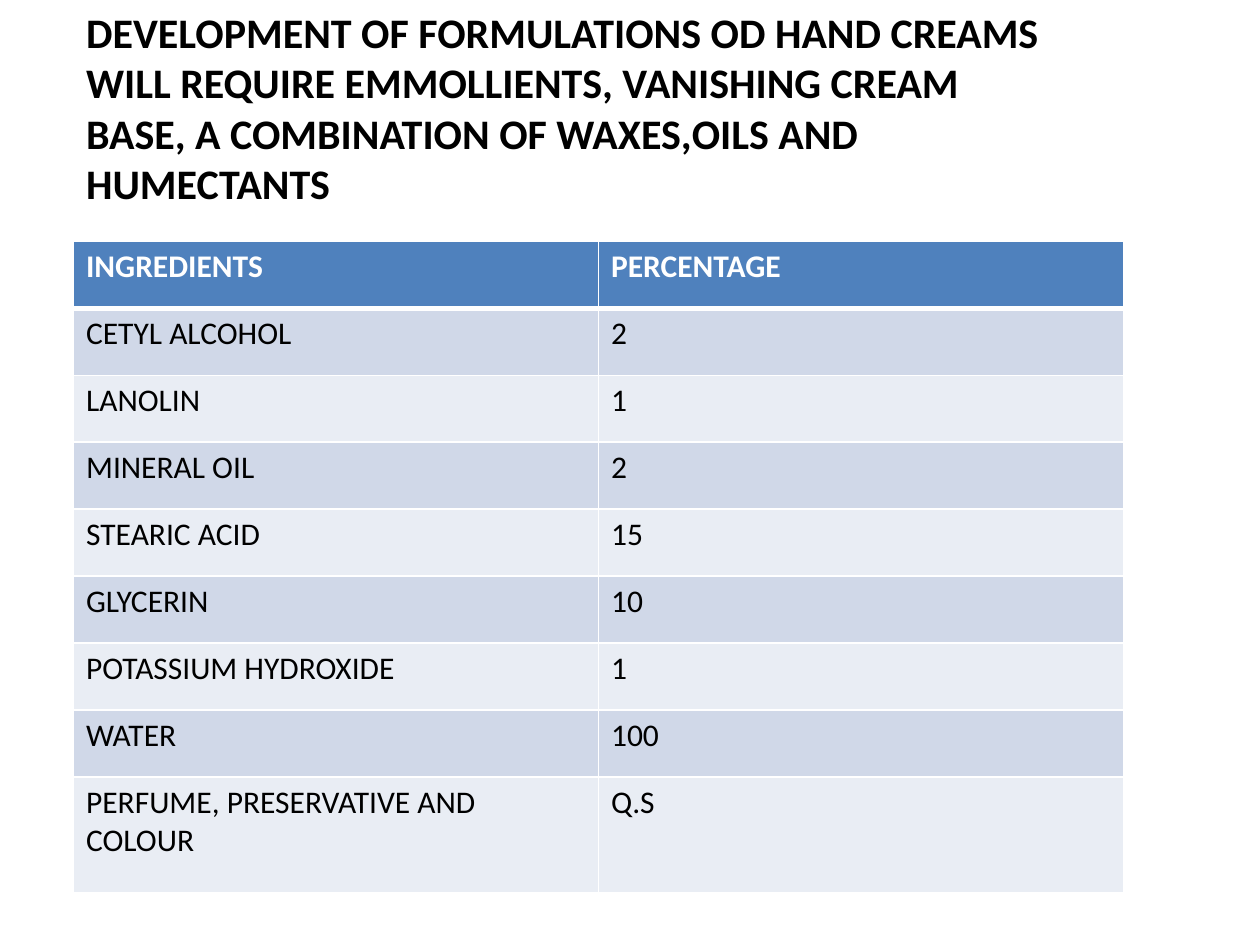
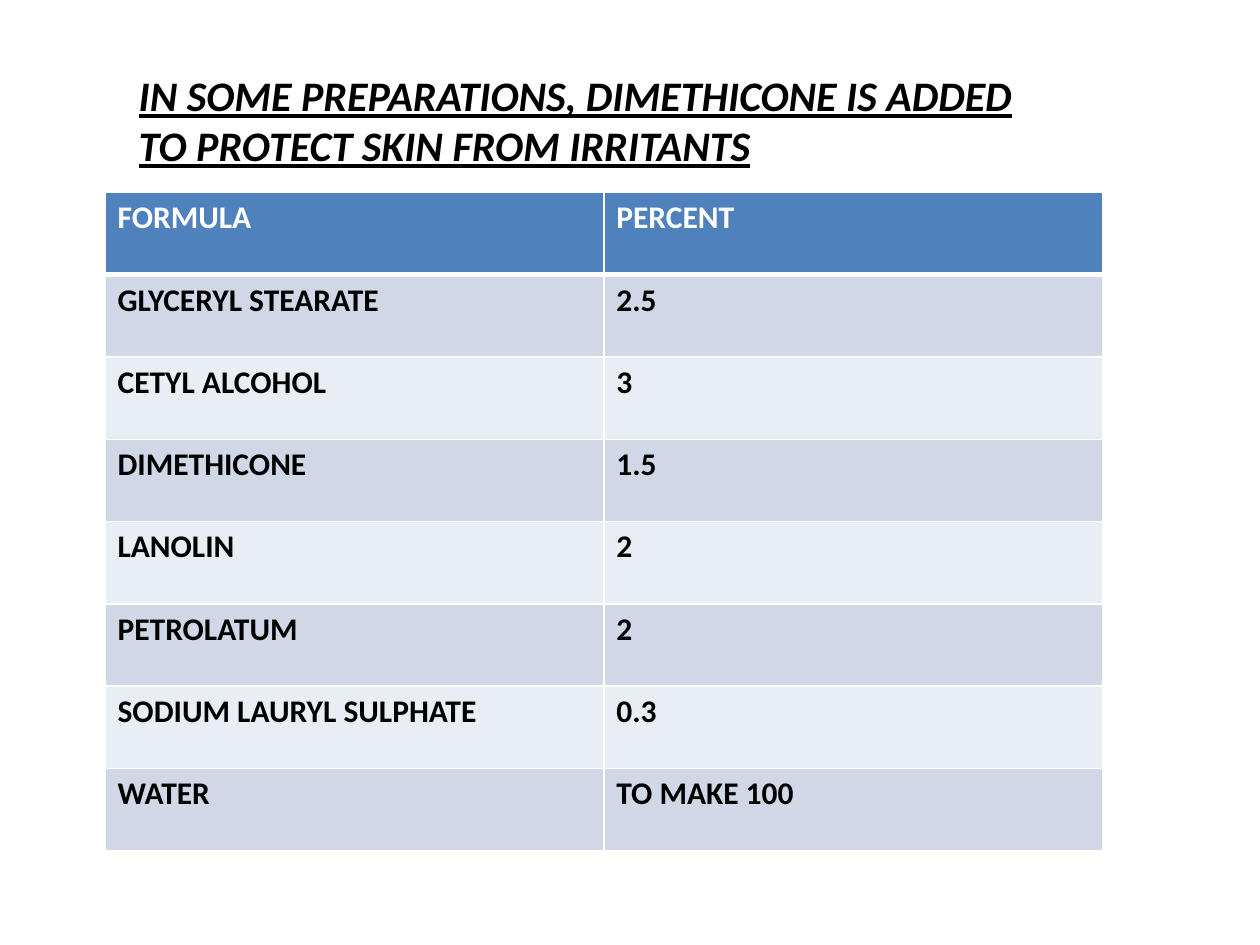
"""Build two slides of hand cream formulations."""
from lxml.etree import SubElement
from pptx import Presentation
from pptx.dml.color import RGBColor
from pptx.enum.text import MSO_ANCHOR, MSO_AUTO_SIZE, PP_ALIGN
from pptx.oxml.ns import qn
from pptx.util import Pt

BLACK = RGBColor(0x00, 0x00, 0x00)
WHITE = RGBColor(0xFF, 0xFF, 0xFF)
HEADER_BLUE = RGBColor(0x4F, 0x81, 0xBD)
BAND_DARK = RGBColor(0xD0, 0xD8, 0xE8)
BAND_LIGHT = RGBColor(0xE9, 0xED, 0xF4)

HAND_CREAM = [
    ("INGREDIENTS", "PERCENTAGE"),
    ("CETYL ALCOHOL", "2"),
    ("LANOLIN", "1"),
    ("MINERAL OIL", "2"),
    ("STEARIC ACID", "15"),
    ("GLYCERIN", "10"),
    ("POTASSIUM HYDROXIDE", "1"),
    ("WATER", "100"),
    ("PERFUME, PRESERVATIVE AND COLOUR", "Q.S"),
]
DIMETHICONE_CREAM = [
    ("FORMULA", "PERCENT"),
    ("GLYCERYL STEARATE", "2.5"),
    ("CETYL ALCOHOL", "3"),
    ("DIMETHICONE", "1.5"),
    ("LANOLIN", "2"),
    ("PETROLATUM", "2"),
    ("SODIUM LAURYL SULPHATE", "0.3"),
    ("WATER", "TO MAKE 100"),
]


class FormulaDeck:
    """Hold the deck style and the slide being built."""

    font_name = "Calibri"
    title_size = Pt(24)
    cell_size = Pt(18)
    thin_rule = Pt(1)
    header_rule = Pt(3)

    def __init__(self):
        self.deck = Presentation()
        self.deck.slide_width, self.deck.slide_height = Pt(720), Pt(540)
        self.page = None

    def add_page(self):
        """Start a slide on the title-only layout."""
        self.page = self.deck.slides.add_slide(self.deck.slide_layouts[5])

    def style_font(self, font, size, color, bold):
        """Apply the shared typeface with the given look."""
        font.name, font.size, font.bold = self.font_name, size, bold
        font.color.rgb = color

    def add_title(self, text, left, top, width, height, emphasis=False):
        """Place the title, in underlined italics when emphasised."""
        box = self.page.shapes.title
        box.left, box.top, box.width, box.height = map(Pt, (left, top, width, height))
        frame = box.text_frame
        frame.text = text
        frame.word_wrap = True
        frame.auto_size = MSO_AUTO_SIZE.SHAPE_TO_FIT_TEXT
        frame.vertical_anchor = MSO_ANCHOR.TOP
        paragraph = frame.paragraphs[0]
        paragraph.alignment = PP_ALIGN.LEFT
        font = paragraph.runs[0].font
        self.style_font(font, self.title_size, BLACK, True)
        font.italic = font.underline = emphasis

    def add_borders(self, cell, row_index):
        """Draw white cell borders, thicker between header and body."""
        top = self.header_rule if row_index == 1 else self.thin_rule
        bottom = self.header_rule if row_index == 0 else self.thin_rule
        widths = {"L": self.thin_rule, "R": self.thin_rule, "T": top, "B": bottom}
        properties = cell._tc.get_or_add_tcPr()
        for side, width in widths.items():
            line = SubElement(properties, qn(f"a:ln{side}"), w=str(width))
            fill = SubElement(line, qn("a:solidFill"))
            SubElement(fill, qn("a:srgbClr"), val=str(WHITE))

    def add_formula_table(self, rows, left, top, column_width, row_heights, bold_body=False):
        """Add a banded table with a header row."""
        column_count = len(rows[0])
        table = self.page.shapes.add_table(
            len(rows), column_count, Pt(left), Pt(top),
            Pt(column_width * column_count), Pt(sum(row_heights)),
        ).table
        for column in table.columns:
            column.width = Pt(column_width)
        for row_index, (values, height) in enumerate(zip(rows, row_heights)):
            table.rows[row_index].height = Pt(height)
            is_header = row_index == 0
            band = BAND_DARK if row_index % 2 else BAND_LIGHT
            for column_index, value in enumerate(values):
                cell = table.cell(row_index, column_index)
                cell.text_frame.text = value
                self.style_font(
                    cell.text_frame.paragraphs[0].runs[0].font, self.cell_size,
                    WHITE if is_header else BLACK, is_header or bold_body,
                )
                self.add_borders(cell, row_index)
                cell.fill.solid()
                cell.fill.fore_color.rgb = HEADER_BLUE if is_header else band


def main():
    """Build both slides and save the deck."""
    builder = FormulaDeck()

    builder.add_page()
    builder.add_title(
        "DEVELOPMENT OF FORMULATIONS OD HAND CREAMS WILL REQUIRE EMMOLLIENTS, "
        "VANISHING CREAM BASE, A COMBINATION OF WAXES,OILS AND HUMECTANTS",
        42, 0, 564, 124,
    )
    builder.add_formula_table(HAND_CREAM, 42, 138, 300, [38.25] * 8 + [66])

    builder.add_page()
    builder.add_title(
        "IN SOME PREPARATIONS, DIMETHICONE IS ADDED TO PROTECT SKIN FROM IRRITANTS",
        72, 36, 546, 65.5, emphasis=True,
    )
    builder.add_formula_table(DIMETHICONE_CREAM, 60, 110, 285, [47] * 8, bold_body=True)

    builder.deck.save("out.pptx")


if __name__ == "__main__":
    main()
